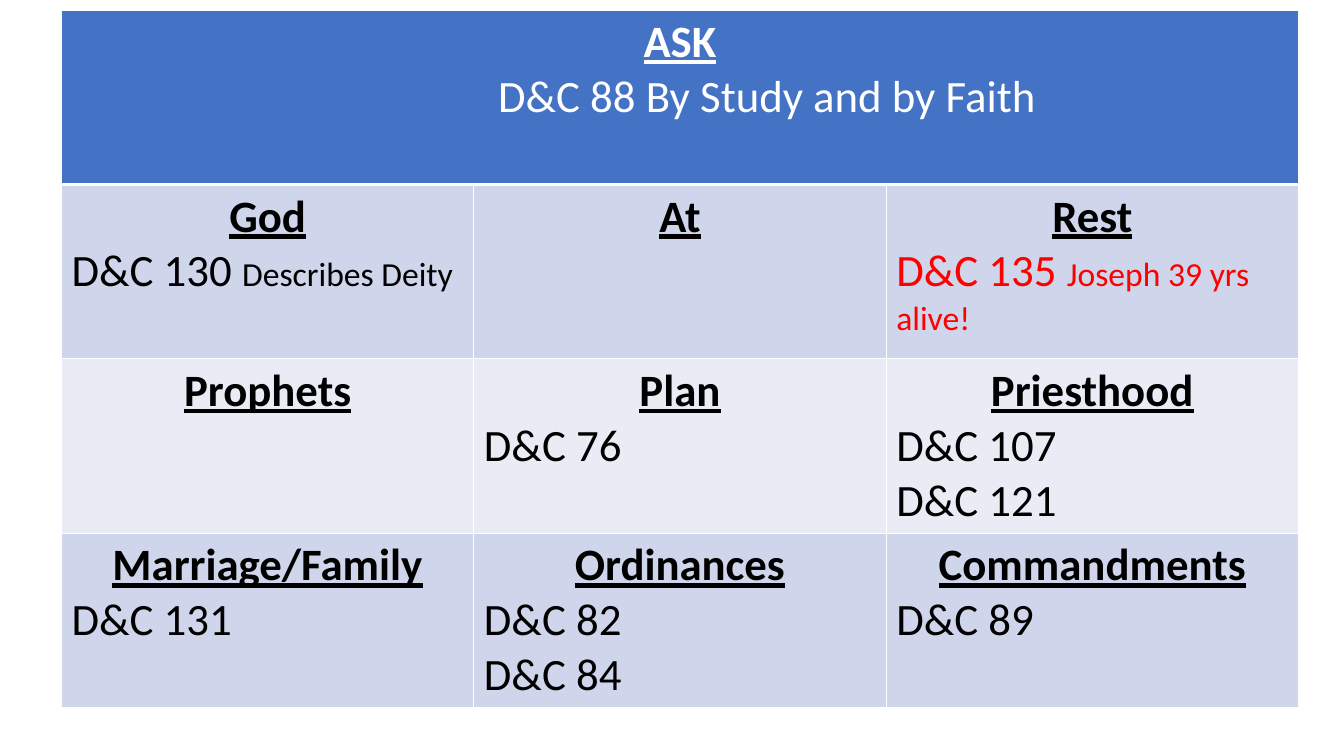
"""Build a slide with a table of scripture topics and their sections."""
import pptx
import pptx.util
import pptx.dml.color
import pptx.enum.text
import pptx.oxml
import pptx.oxml.ns

Inches = pptx.util.Inches
Pt = pptx.util.Pt

COLORS = {"header": "4472C4", "odd": "CFD5EA", "even": "E9EBF5",
          "white": "FFFFFF", "black": "000000", "red": "FF0000"}
BANNER = ("ASK", [("D&C 88 By Study and by Faith", "")])
TOPICS = [
    [("God", [("D&C 130 ", "Describes Deity")]),
     ("At", []),
     ("Rest", [("D&C 135 ", "Joseph 39 yrs alive!")])],
    [("Prophets", []),
     ("Plan", [("D&C 76", "")]),
     ("Priesthood", [("D&C 107", ""), ("D&C 121", "")])],
    [("Marriage/Family", [("D&C 131", "")]),
     ("Ordinances", [("D&C 82", ""), ("D&C 84", "")]),
     ("Commandments", [("D&C 89", "")])],
]
HIGHLIGHTED = "Rest"
LEFT, TOP, COLUMN_WIDTH, ROW_HEIGHT = 0.61, 0.1, 4.09, 1.73
BANNER_INDENT = 4.23
TITLE = {"size": Pt(32), "bold": True, "underline": True}
SECTION = {"size": Pt(32), "bold": False, "underline": False}
REMARK = {**SECTION, "size": Pt(24)}


def rgb(color):
    return pptx.dml.color.RGBColor.from_string(COLORS[color])


def add_run(paragraph, words, formats, color):
    run = paragraph.add_run()
    run.text = words
    run.font.name = "Calibri"
    run.font.color.rgb = rgb(color)
    for key, value in formats.items():
        setattr(run.font, key, value)


def set_borders(cell, widths):
    properties = cell._tc.get_or_add_tcPr()
    for position, (side, width) in enumerate(widths.items()):
        properties.insert(position, pptx.oxml.parse_xml(
            f'<a:ln{side} {pptx.oxml.ns.nsdecls("a")} w="{Pt(width)}"><a:solidFill>'
            f'<a:srgbClr val="{COLORS["white"]}"/></a:solidFill></a:ln{side}>'))


def fill_cell(cell, topic, fill, title_color, section_color, indent=0):
    title, sections = topic
    cell.fill.solid()
    cell.fill.fore_color.rgb = rgb(fill)
    heading = cell.text_frame.paragraphs[0]
    heading.alignment = pptx.enum.text.PP_ALIGN.CENTER
    add_run(heading, title, TITLE, title_color)
    for section, remark in sections:
        line = cell.text_frame.add_paragraph()
        line.alignment = pptx.enum.text.PP_ALIGN.LEFT
        if indent:
            line._p.get_or_add_pPr().set("marL", str(Inches(indent)))
        add_run(line, section, SECTION, section_color)
        if remark:
            add_run(line, remark, REMARK, section_color)


def main():
    deck = pptx.Presentation()
    deck.slide_width, deck.slide_height = Inches(13.33), Inches(7.5)
    slide = deck.slides.add_slide(deck.slide_layouts[6])
    row_count, column_count = len(TOPICS) + 1, len(TOPICS[0])
    grid = slide.shapes.add_table(
        row_count, column_count, Inches(LEFT), Inches(TOP),
        Inches(COLUMN_WIDTH * column_count), Inches(ROW_HEIGHT * row_count)).table
    for column in grid.columns:
        column.width = Inches(COLUMN_WIDTH)
    for row_index, row in enumerate(grid.rows):
        row.height = Inches(ROW_HEIGHT)
        for cell in row.cells:
            set_borders(cell, {"L": 1, "R": 1, "T": 3 if row_index == 1 else 1,
                               "B": 3 if row_index == 0 else 1})

    grid.cell(0, 0).merge(grid.cell(0, column_count - 1))
    fill_cell(grid.cell(0, 0), BANNER, "header", "white", "white", BANNER_INDENT)
    for row_index, topics in enumerate(TOPICS, 1):
        for column_index, topic in enumerate(topics):
            fill_cell(grid.cell(row_index, column_index), topic,
                      "odd" if row_index % 2 else "even", "black",
                      "red" if topic[0] == HIGHLIGHTED else "black")
    deck.save("out.pptx")


if __name__ == "__main__":
    main()
